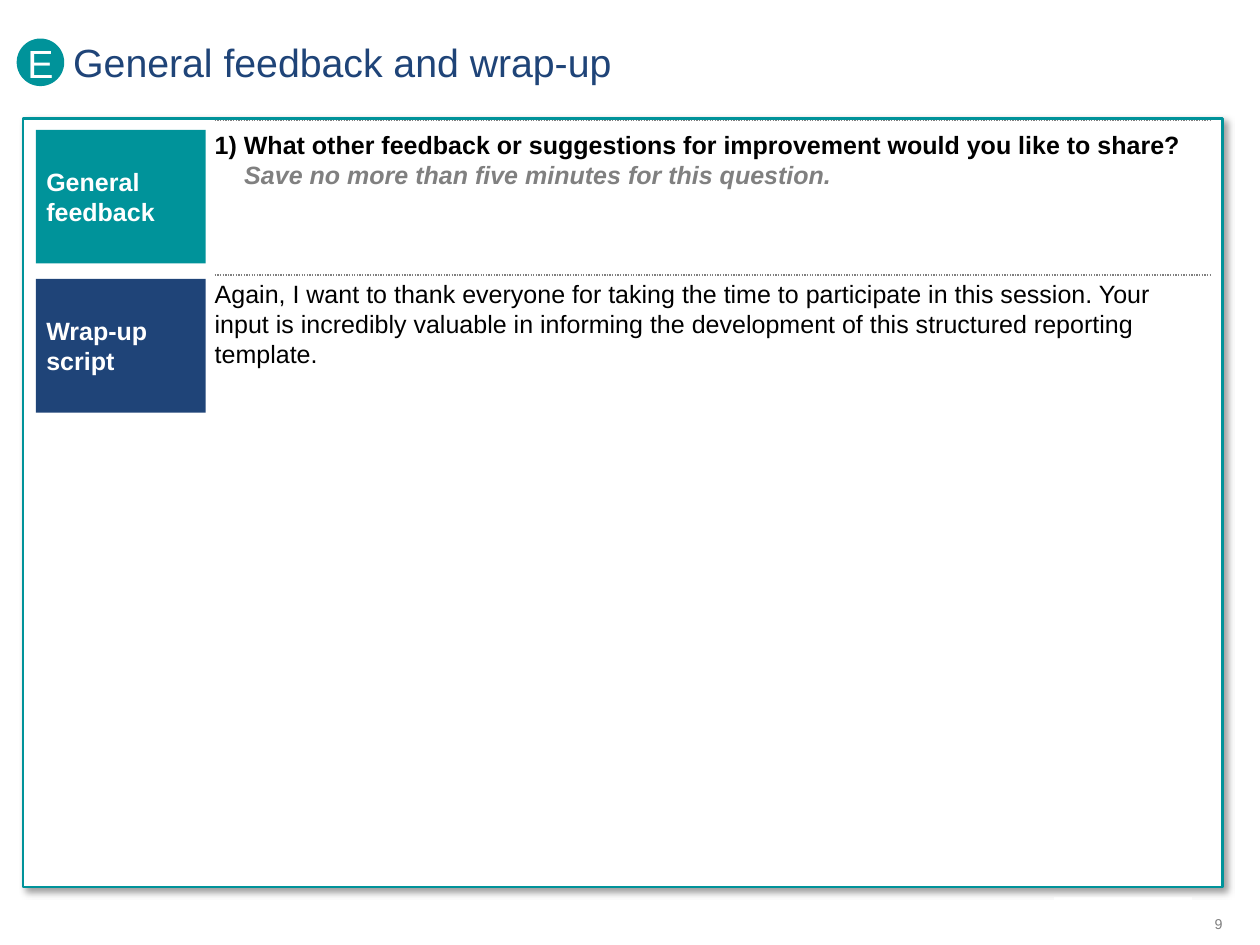
import pptx
import pptx.util
import pptx.dml.color
import pptx.enum.dml
import pptx.enum.shapes
import pptx.enum.text
import pptx.oxml
import pptx.oxml.ns

Inches = pptx.util.Inches
Shape = pptx.enum.shapes.MSO_SHAPE
Align = pptx.enum.text.PP_ALIGN
Anchor = pptx.enum.text.MSO_ANCHOR

TEAL, NAVY, GRAY, WHITE, BLACK = "00939A", "1F4478", "808080", "FFFFFF", "000000"
LABEL_X, LABEL_W, LABEL_H = 0.28, 1.32, 1.04
TEXT_X, TEXT_W = 1.67, 7.74


def color(code):
    return pptx.dml.color.RGBColor.from_string(code)


def apply(target, values):
    for name, value in values.items():
        setattr(target, name, value)


def write(shape, runs, size, align=Align.LEFT, anchor=Anchor.TOP,
          inset=0, wrap=True, left=0, hang=0):
    frame = shape.text_frame
    apply(frame, {
        "word_wrap": wrap,
        "vertical_anchor": anchor,
        "margin_left": Inches(inset),
        "margin_right": Inches(inset),
        "margin_top": Inches(inset),
        "margin_bottom": Inches(inset),
    })
    line = frame.paragraphs[0]
    line.alignment = align
    if left:
        props = line._p.get_or_add_pPr()
        props.set("marL", str(Inches(left)))
        props.set("indent", str(Inches(hang)))
    for text, code, style in runs:
        run = line.add_run()
        run.text = text
        apply(run.font, {"name": "Arial", "size": pptx.util.Pt(size), **style})
        run.font.color.rgb = color(code)


def add_text(slide, box, runs, size, **layout):
    shape = slide.shapes.add_textbox(*map(Inches, box))
    write(shape, runs, size, **layout)


def add_block(slide, kind, box, fill, edge=None):
    shape = slide.shapes.add_shape(kind, *map(Inches, box))
    shape.shadow.inherit = False
    shape.fill.solid()
    shape.fill.fore_color.rgb = color(fill)
    if edge:
        shape.line.color.rgb = color(edge)
        shape.line.width = pptx.util.Pt(1.5)
    else:
        shape.line.fill.background()
    return shape


def add_shade(shape):
    space = pptx.oxml.ns.nsdecls("a")
    effect = shape._element.spPr.find(pptx.oxml.ns.qn("a:effectLst"))
    effect.append(pptx.oxml.parse_xml(
        f'<a:outerShdw {space} blurRad="{pptx.util.Pt(4)}" dist="{pptx.util.Pt(3)}" '
        f'dir="{45 * 60000}" algn="tl" rotWithShape="0">'
        f'<a:srgbClr val="{BLACK}"><a:alpha val="40000"/></a:srgbClr></a:outerShdw>'))


def add_rule(slide, top):
    rule = slide.shapes.add_connector(
        pptx.enum.shapes.MSO_CONNECTOR.STRAIGHT,
        Inches(TEXT_X), Inches(top), Inches(TEXT_X + TEXT_W), Inches(top))
    rule.line.color.rgb = color(GRAY)
    apply(rule.line, {
        "width": pptx.util.Pt(0.75),
        "dash_style": pptx.enum.dml.MSO_LINE.ROUND_DOT,
    })
    space = pptx.oxml.ns.nsdecls("a")
    rule._element.spPr.append(pptx.oxml.parse_xml(f"<a:effectLst {space}/>"))


def add_topic(slide, top, rule, label, fill, runs, **layout):
    block = add_block(slide, Shape.RECTANGLE, (LABEL_X, top, LABEL_W, LABEL_H), fill)
    write(block, [(label, WHITE, {"bold": True})], 14,
          anchor=Anchor.MIDDLE, inset=0.08)
    add_text(slide, (TEXT_X, top, TEXT_W, 0.47), runs, 14, **layout)
    add_rule(slide, rule)


def main():
    deck = pptx.Presentation()
    apply(deck, {"slide_width": Inches(9.8), "slide_height": Inches(7.35)})
    slide = deck.slides.add_slide(deck.slide_layouts[6])

    add_text(slide, (9.37, 7.12, 0.14, 0.13), [("9", GRAY, {})], 8,
             align=Align.RIGHT, anchor=Anchor.MIDDLE, wrap=False)
    panel = add_block(slide, Shape.RECTANGLE, (0.18, 0.92, 9.33, 5.98), WHITE, TEAL)
    add_shade(panel)
    add_text(slide, (0.13, 0.3, 9.43, 0.37),
             [("General feedback and wrap-up", NAVY, {})], 22, left=0.44)
    badge = add_block(slide, Shape.OVAL, (0.13, 0.3, 0.37, 0.37), TEAL)
    write(badge, [("E", WHITE, {})], 22,
          align=Align.CENTER, anchor=Anchor.MIDDLE, wrap=False)

    add_topic(slide, 1.01, 0.94, "General feedback", TEAL, [
        ("1) What other feedback or suggestions for improvement would you like to share? ",
         BLACK, {"bold": True}),
        ("Save no more than five minutes for this question.",
         GRAY, {"bold": True, "italic": True}),
    ], left=0.23, hang=-0.23)
    add_topic(slide, 2.17, 2.14, "Wrap-up script", NAVY, [
        ("Again, I want to thank everyone for taking the time to participate in this "
         "session. Your input is incredibly valuable in informing the development of "
         "this structured reporting template.", BLACK, {}),
    ])
    add_block(slide, Shape.RECTANGLE, (8.2, 6.98, 1.07, 0.35), WHITE)
    deck.save("out.pptx")


if __name__ == "__main__":
    main()
